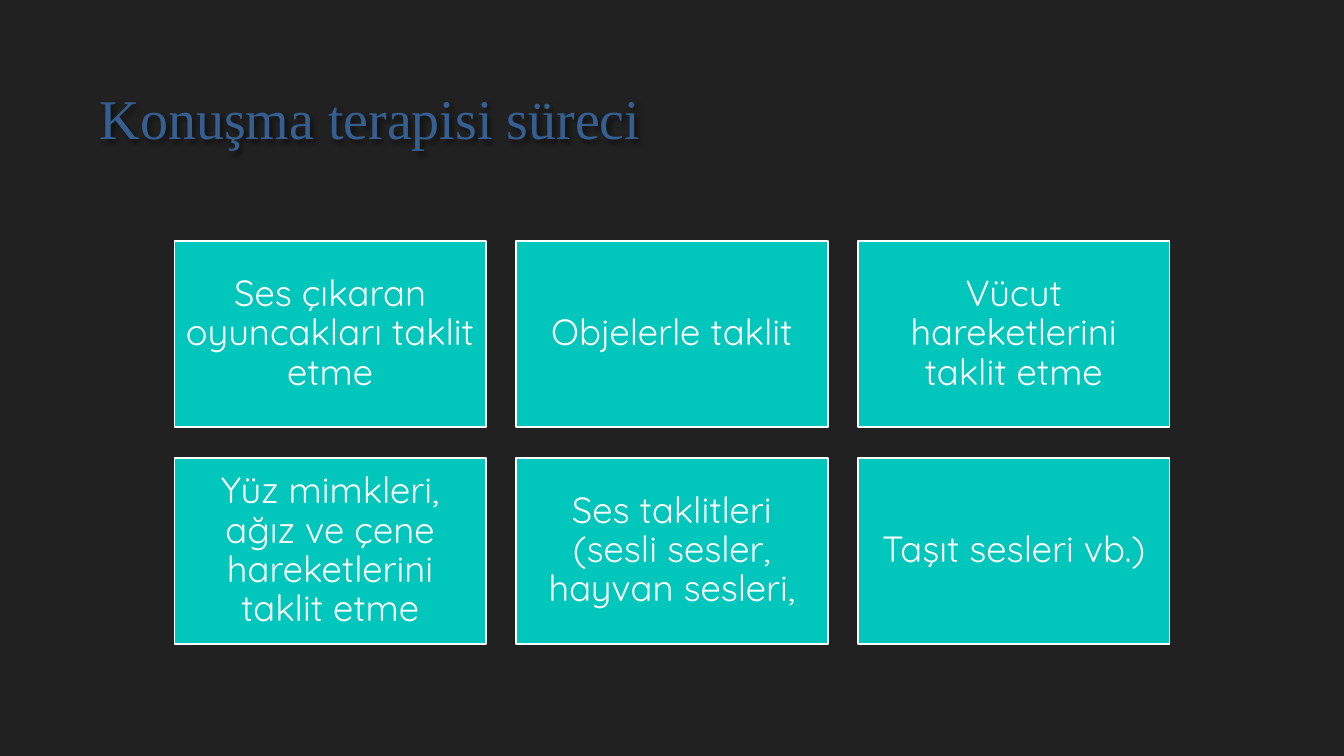
from dataclasses import dataclass

from lxml import etree
from pptx import Presentation
from pptx import util as u
from pptx.dml.color import RGBColor
from pptx.enum import shapes, text
from pptx.oxml import ns
from pptx.slide import Slide

BACKGROUND = RGBColor(0x21, 0x21, 0x21)
TITLE_BLUE = RGBColor(0x36, 0x5F, 0x91)
TEAL = RGBColor(0x00, 0xC6, 0xBB)
WHITE = RGBColor(0xFF, 0xFF, 0xFF)

GRID_LEFT, GRID_TOP = 1.73, 2.39
CARD_WIDTH, CARD_HEIGHT, GAP = 3.09, 1.85, 0.3
CARD_INSET = u.Inches(0.11)


@dataclass(frozen=True)
class Card:
    column: int
    row: int
    label: str


CARDS = [
    Card(0, 0, "Ses çıkaran oyuncakları taklit etme"),
    Card(1, 0, "Objelerle taklit"),
    Card(2, 0, "Vücut hareketlerini taklit etme"),
    Card(0, 1, "Yüz mimkleri, ağız ve çene hareketlerini taklit etme"),
    Card(1, 1, "Ses taklitleri (sesli sesler, hayvan sesleri,"),
    Card(2, 1, "Taşıt sesleri vb.)"),
]


def add_soft_shadow(box) -> None:
    effects = etree.SubElement(box.element.spPr, ns.qn("a:effectLst"))
    shadow = etree.SubElement(
        effects, ns.qn("a:outerShdw"), blurRad="50800", dist="25400", dir="2700000"
    )
    color = etree.SubElement(shadow, ns.qn("a:srgbClr"), val="000000")
    etree.SubElement(color, ns.qn("a:alpha"), val="50000")


def draw_title(page: Slide, label: str) -> None:
    title = page.shapes.title
    title.left, title.top = u.Inches(0.89), u.Inches(0.49)
    title.width, title.height = u.Inches(11.56), u.Inches(1.06)
    title.fill.background()
    add_soft_shadow(title)
    frame = title.text_frame
    frame.text = label
    frame.vertical_anchor = text.MSO_ANCHOR.BOTTOM
    para = frame.paragraphs[0]
    para.alignment = text.PP_ALIGN.LEFT
    para.font.name = "Times New Roman"
    para.font.size = u.Pt(40)
    para.font.color.rgb = TITLE_BLUE


def draw_card(page: Slide, card: Card) -> None:
    box = page.shapes.add_shape(
        shapes.MSO_SHAPE.RECTANGLE,
        u.Inches(GRID_LEFT + card.column * (CARD_WIDTH + GAP)),
        u.Inches(GRID_TOP + card.row * (CARD_HEIGHT + GAP)),
        u.Inches(CARD_WIDTH),
        u.Inches(CARD_HEIGHT),
    )
    box.shadow.inherit = False
    box.fill.solid()
    box.fill.fore_color.rgb = TEAL
    box.line.color.rgb = WHITE
    box.line.width = u.Pt(1.25)
    frame = box.text_frame
    frame.text = card.label
    frame.word_wrap = True
    frame.vertical_anchor = text.MSO_ANCHOR.MIDDLE
    frame.margin_left = frame.margin_right = CARD_INSET
    frame.margin_top = frame.margin_bottom = CARD_INSET
    para = frame.paragraphs[0]
    para.alignment = text.PP_ALIGN.CENTER
    para.line_spacing = 0.9
    para.font.name = "Quicksand"
    para.font.size = u.Pt(26)
    para.font.color.rgb = WHITE


def main() -> None:
    deck = Presentation()
    deck.slide_width, deck.slide_height = u.Inches(13.33), u.Inches(7.5)
    page = deck.slides.add_slide(deck.slide_layouts[5])
    page.background.fill.solid()
    page.background.fill.fore_color.rgb = BACKGROUND
    draw_title(page, "Konuşma terapisi süreci")
    for card in CARDS:
        draw_card(page, card)
    deck.save("out.pptx")


if __name__ == "__main__":
    main()
